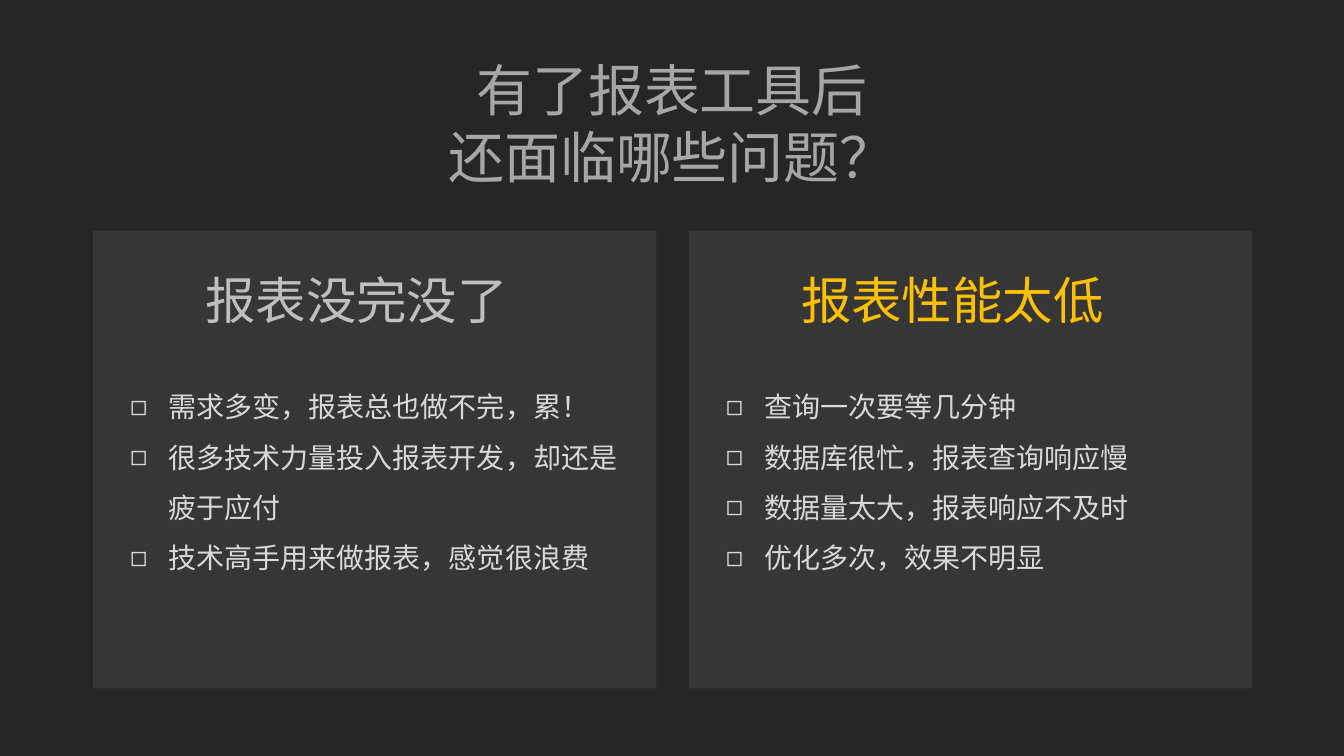
from lxml import etree
from pptx import Presentation
from pptx.dml.color import RGBColor
from pptx.enum.shapes import MSO_SHAPE
from pptx.enum.text import MSO_ANCHOR, MSO_AUTO_SIZE, PP_ALIGN
from pptx.oxml.ns import qn
from pptx.util import Inches, Pt

RECT = MSO_SHAPE.RECTANGLE
TOP = MSO_ANCHOR.TOP
FIXED = MSO_AUTO_SIZE.NONE
LEFT, CENTER = PP_ALIGN.LEFT, PP_ALIGN.CENTER

COLORS = {
    "back": "262626",
    "panel": "363636",
    "title": "A6A6A6",
    "muted": "BFBFBF",
    "accent": "FFC000",
    "item": "D9D9D9",
}
HAN = "Noto Sans CJK SC"
LATIN = "Arial"

# Grid in inches: two equal columns
COL_X, COL_W, GAP = 0.92, 5.59, 0.32
ROW_Y, ROW_H = 2.29, 4.54
INDENT = 0.38

TITLE = ["有了报表工具后", "还面临哪些问题？"]
COLUMNS = [
    ("报表没完没了", "muted", 2.06, [
        "需求多变，报表总也做不完，累！",
        "很多技术力量投入报表开发，却还是疲于应付",
        "技术高手用来做报表，感觉很浪费",
    ]),
    ("报表性能太低", "accent", 2.57, [
        "查询一次要等几分钟",
        "数据库很忙，报表查询响应慢",
        "数据量太大，报表响应不及时",
        "优化多次，效果不明显",
    ]),
]


def rgb(key):
    return RGBColor.from_string(COLORS[key])


def add_run(para, text, size, color, font):
    run = para.add_run()
    run.text = text
    run.font.size = Pt(size)
    run.font.bold = False
    run.font.name = font
    run.font.color.rgb = rgb(color)
    east = etree.SubElement(run.font._element, qn("a:ea"))
    east.set("typeface", HAN)


def add_bullet(para):
    props = para._p.get_or_add_pPr()
    props.set("marL", str(Inches(INDENT)))
    props.set("indent", str(-Inches(INDENT)))
    etree.SubElement(props, qn("a:buChar")).set("char", "◻")


def fill_text(holder, box, lines, size, color, font=HAN, is_list=False):
    """Place a placeholder and write one paragraph per line."""
    holder.left, holder.top, holder.width, holder.height = map(Inches, box)
    frame = holder.text_frame
    frame.auto_size = FIXED
    frame.word_wrap = is_list
    frame.vertical_anchor = TOP
    for i, line in enumerate(lines):
        para = frame.add_paragraph() if i else frame.paragraphs[0]
        para.alignment = LEFT if is_list else CENTER
        para.line_spacing = 1.5 if is_list else 1.0
        para.space_before = Pt(0)
        if is_list:
            add_bullet(para)
        add_run(para, line, size, color, font)


def add_panel(slide, x):
    panel = slide.shapes.add_shape(
        RECT, Inches(x), Inches(ROW_Y), Inches(COL_W), Inches(ROW_H))
    panel.shadow.inherit = False
    panel.fill.solid()
    panel.fill.fore_color.rgb = rgb("panel")
    panel.line.fill.background()
    # Send behind the placeholders
    slide.shapes._spTree.insert(2, panel._element)


def add_column(slide, i, head, color, height, items):
    x = COL_X + i * (COL_W + GAP)
    add_panel(slide, x)
    holders = slide.placeholders
    fill_text(holders[1 + 2 * i], (x + 1, ROW_Y + 0.33, 3.23, 0.71),
              [head], 36, color)
    fill_text(holders[2 + 2 * i], (x + 0.27, ROW_Y + 1.36, 5.05, height),
              items, 20, "item", LATIN, True)


def main():
    deck = Presentation()
    deck.slide_width, deck.slide_height = Inches(13.33), Inches(7.5)
    # Comparison layout: title, two headings, two lists
    slide = deck.slides.add_slide(deck.slide_layouts[4])
    slide.background.fill.solid()
    slide.background.fill.fore_color.rgb = rgb("back")

    # Title
    fill_text(slide.shapes.title, (4.32, 0.5, 4.69, 1.45), TITLE, 40, "title")

    # Columns
    for i, column in enumerate(COLUMNS):
        add_column(slide, i, *column)

    deck.save("out.pptx")


if __name__ == "__main__":
    main()
